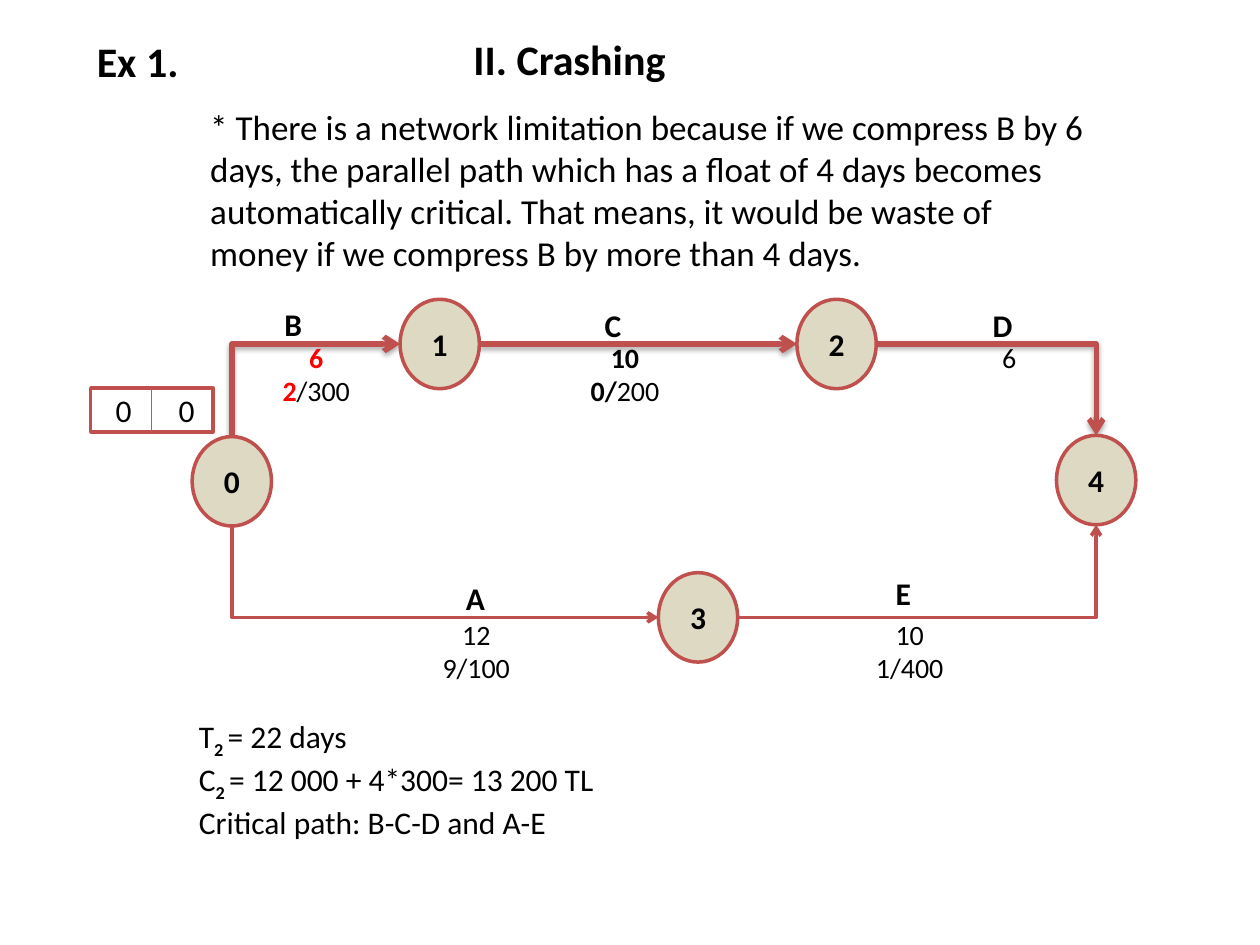
import pptx
import pptx.dml.color
import pptx.enum.shapes
import pptx.enum.text
import pptx.oxml
import pptx.oxml.ns
import pptx.util
from pptx.util import Inches

COLORS = {
    "red_line": "C0504D", "node": "DDD9C3", "divider": "4B7EBC",
    "text": "000000", "crashed": "FF0000", "white": "FFFFFF",
}
FONT = "Calibri"
NODE_WIDTH, NODE_HEIGHT = 0.63, 0.71
NAMESPACE = pptx.oxml.ns.nsdecls("a")

NODES = {
    "0": (1.84, 3.82), "1": (3.49, 2.73), "2": (6.64, 2.73),
    "3": (5.54, 4.9), "4": (8.7, 3.81),
}
ACTIVITIES = [
    ("1", "right", "2", "left", True),
    ("0", "bottom", "3", "left", False),
    ("0", "top", "1", "left", True),
    ("3", "right", "4", "bottom", False),
    ("2", "right", "4", "top", True),
]
SIDES = {"left": (-1, 0), "right": (1, 0), "top": (0, -1), "bottom": (0, 1)}

ACTIVITY_NAMES = [
    ("B", 2.16, 2.37), ("E", 7.01, 4.51), ("D", 7.78, 2.38),
    ("C", 4.7, 2.38), ("A", 3.6, 4.55),
]
BOLD, RED = {"bold": True}, {"bold": True, "color": "crashed"}
SUBSCRIPT = {"bold": True, "baseline": -25000}
COSTS = [
    (2, 2.65, 1.02, [("6\n2", RED), ("/300", {})]),
    (7.8, 2.65, 0.42, [("6", {})]),
    (6.71, 4.85, 1.02, [("10\n1/400", {})]),
    (3.27, 4.85, 1.02, [("12\n9/100", {})]),
    (4.45, 2.65, 1.02, [("10\n0/", BOLD), ("200", {})]),
]
EXPLANATION = (
    "* There is a network limitation because if we compress B by 6 days, "
    "the parallel path which has a float of 4 days becomes automatically critical. "
    "That means, it would be waste of money if we compress B by more than 4 days."
)
RESULTS = [
    [("T", {}), ("2 ", SUBSCRIPT), ("= 22 days", {})],
    [("C", {}), ("2 ", SUBSCRIPT), ("= 12 000 + 4*300= 13 200 TL", {})],
    [("Critical path: B-C-D and A-E", {})],
]
BODY_TEXTS = [
    ((1.48, 5.64, 5.01, 1.01), 18, RESULTS),
    ((1.57, 0.79, 7.18, 1.45), 20, [[(EXPLANATION, {})]]),
    ((3.66, 0.22, 2.96, 0.5), 24, [[("II. Crashing", BOLD)]]),
    ((0.67, 0.23, 2.96, 0.5), 24, [[("Ex 1.", BOLD)]]),
]


def rgb(name):
    return pptx.dml.color.RGBColor.from_string(COLORS[name])


def write_run(paragraph, text, size, bold=False, color="text", baseline=0):
    for index, line in enumerate(text.split("\n")):
        if index:
            paragraph.add_line_break()
        run = paragraph.add_run()
        run.text = line
        run.font.name = FONT
        run.font.size = pptx.util.Pt(size)
        run.font.bold = bold
        run.font.color.rgb = rgb(color)
        if baseline:
            run.font._element.set("baseline", str(baseline))


def write_text(shape, paragraphs, size, centered=False):
    frame = shape.text_frame
    frame.word_wrap = True
    for index, runs in enumerate(paragraphs):
        paragraph = frame.add_paragraph() if index else frame.paragraphs[0]
        alignment = pptx.enum.text.PP_ALIGN
        paragraph.alignment = alignment.CENTER if centered else alignment.LEFT
        for text, style in runs:
            write_run(paragraph, text, size, **style)


def add_text(shapes, box, size, paragraphs, centered=False):
    shape = shapes.add_textbox(*map(Inches, box))
    write_text(shape, paragraphs, size, centered)
    shape.text_frame.auto_size = pptx.enum.text.MSO_AUTO_SIZE.SHAPE_TO_FIT_TEXT


def add_outlined(shapes, kind, box, fill):
    shape = shapes.add_shape(kind, *map(Inches, box))
    shape.shadow.inherit = False
    shape.fill.solid()
    shape.fill.fore_color.rgb = rgb(fill)
    shape.line.color.rgb = rgb("red_line")
    shape.line.width = pptx.util.Pt(2)
    shape.text_frame.vertical_anchor = pptx.enum.text.MSO_ANCHOR.MIDDLE
    return shape


def add_line(shapes, start, end, color, width, bent=False, shadow=""):
    kinds = pptx.enum.shapes.MSO_CONNECTOR
    kind = kinds.ELBOW if bent else kinds.STRAIGHT
    line = shapes.add_connector(kind, *map(Inches, (*start, *end)))
    line.line.color.rgb = rgb(color)
    line.line.width = pptx.util.Pt(width)
    effects = f"<a:effectLst {NAMESPACE}>{shadow}</a:effectLst>"
    line._element.spPr.append(pptx.oxml.parse_xml(effects))
    return line


def add_activity(shapes, source, source_side, target, target_side, critical):
    start, end = (
        (NODES[node][0] + SIDES[side][0] * NODE_WIDTH / 2,
         NODES[node][1] + SIDES[side][1] * NODE_HEIGHT / 2)
        for node, side in ((source, source_side), (target, target_side))
    )
    bent = start[1] != end[1]
    vertical_first = source_side in ("top", "bottom")
    if vertical_first:
        center_x, center_y = (start[0] + end[0]) / 2, (start[1] + end[1]) / 2
        half_x, half_y = (end[0] - start[0]) / 2, (end[1] - start[1]) / 2
        start = (center_x - half_y, center_y + half_x)
        end = (center_x + half_y, center_y - half_x)
    shadow = (
        '<a:outerShdw blurRad="40000" dist="23000" dir="5400000" rotWithShape="0">'
        f'<a:srgbClr val="{COLORS["text"]}"><a:alpha val="35000"/></a:srgbClr>'
        "</a:outerShdw>"
    ) if critical else ""
    line = add_line(shapes, start, end, "red_line", 3 if critical else 2, bent, shadow)
    properties = line._element.spPr
    if bent:
        properties.find(pptx.oxml.ns.qn("a:prstGeom")).set("prst", "bentConnector2")
    if vertical_first:
        properties.find(pptx.oxml.ns.qn("a:xfrm")).set("rot", "5400000")
    arrow = pptx.oxml.parse_xml(f'<a:tailEnd {NAMESPACE} type="arrow"/>')
    line.line._get_or_add_ln().append(arrow)


def add_start_times(shapes):
    left, top, width, height = 0.72, 3.08, 0.97, 0.35
    rectangle = pptx.enum.shapes.MSO_SHAPE.RECTANGLE
    shape = add_outlined(shapes, rectangle, (left, top, width, height), "white")
    write_text(shape, [[("0\t0", {})]], 18)
    properties = shape.text_frame.paragraphs[0]._p.get_or_add_pPr()
    properties.set("marL", str(Inches(0.1)))
    properties.set("indent", "0")
    properties.append(pptx.oxml.parse_xml(
        f'<a:tabLst {NAMESPACE}><a:tab pos="{Inches(0.57)}" algn="l"/></a:tabLst>'
    ))
    middle = left + width / 2
    add_line(shapes, (middle, top), (middle, top + height), "divider", 0.75)


def main():
    presentation = pptx.Presentation()
    presentation.slide_width, presentation.slide_height = Inches(10), Inches(7.5)
    slide = presentation.slides.add_slide(presentation.slide_layouts[6])
    network = slide.shapes.add_group_shape().shapes
    for activity in ACTIVITIES:
        add_activity(network, *activity)
    for name, (x, y) in NODES.items():
        box = (x - NODE_WIDTH / 2, y - NODE_HEIGHT / 2, NODE_WIDTH, NODE_HEIGHT)
        node = add_outlined(network, pptx.enum.shapes.MSO_SHAPE.OVAL, box, "node")
        write_text(node, [[(name, BOLD)]], 18, centered=True)
    add_start_times(network)
    for name, left, top in ACTIVITY_NAMES:
        add_text(network, (left, top, 0.53, 0.4), 18, [[(name, BOLD)]])
    for left, top, width, runs in COSTS:
        add_text(network, (left, top, width, 0.64), 16, [runs], centered=True)
    for box, size, paragraphs in BODY_TEXTS:
        add_text(slide.shapes, box, size, paragraphs)
    presentation.save("out.pptx")


if __name__ == "__main__":
    main()
